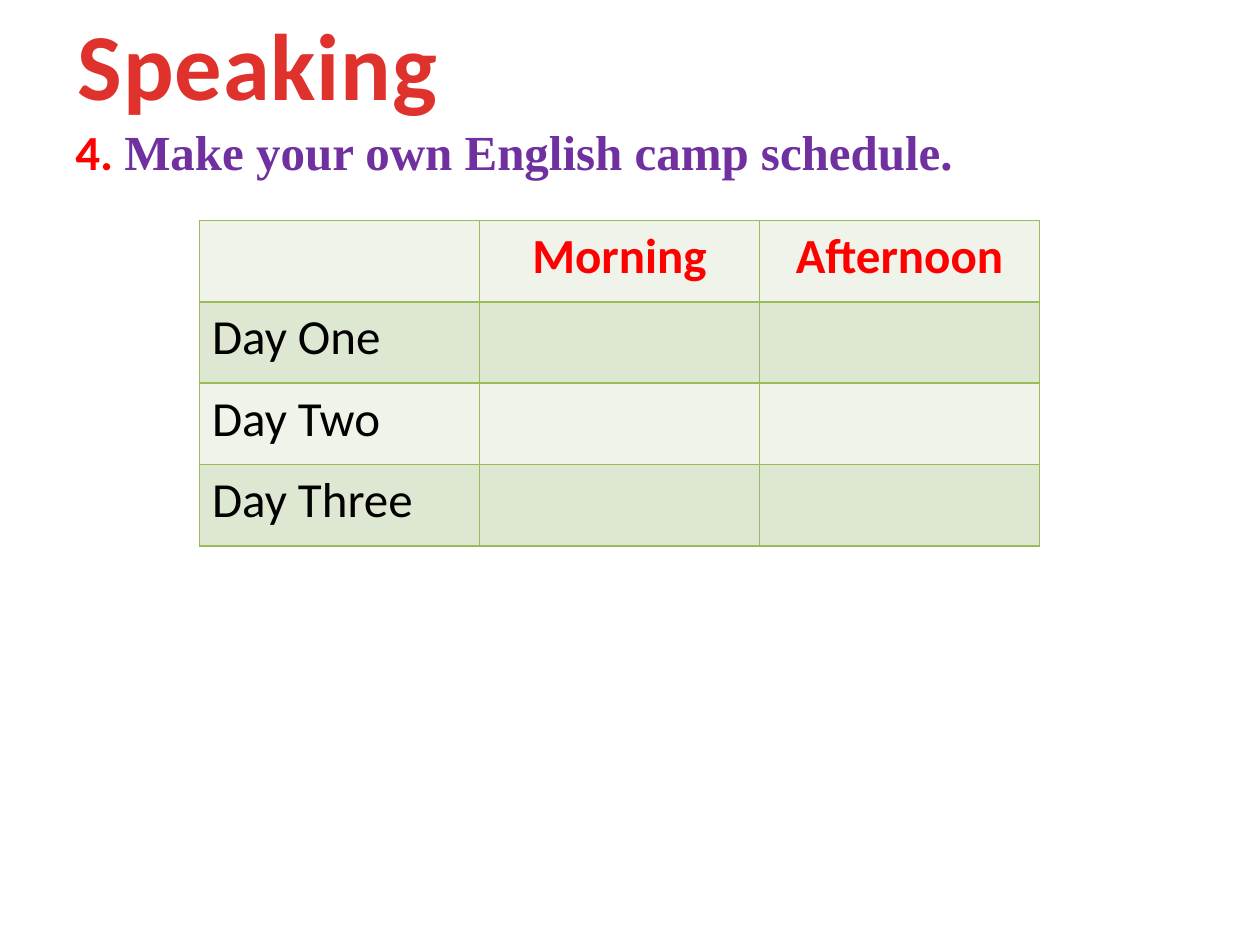
from dataclasses import dataclass

from lxml.etree import SubElement
from pptx import Presentation
from pptx.dml.color import RGBColor
from pptx.enum.text import MSO_ANCHOR, MSO_AUTO_SIZE, PP_ALIGN
from pptx.oxml.ns import qn
from pptx.util import Pt


@dataclass(frozen=True)
class Theme:
    heading_font: str = "Calibri"
    task_font: str = "Times New Roman"
    title_size: float = 54
    text_size: float = 28
    title: str = "E0322D"
    accent: str = "FF0000"
    task: str = "7030A0"
    text: str = "000000"
    border: str = "9BBB59"
    bands: tuple = ("EFF3EA", "DEE7D1")


class SlideBuilder:
    def __init__(self, slide, theme):
        self.slide = slide
        self.theme = theme

    def style(self, font, name, size, color, bold=True):
        font.name = name
        font.size = Pt(size)
        font.bold = bold
        font.color.rgb = RGBColor.from_string(color)

    def title(self, text, left, top, width, height):
        shape = self.slide.shapes.title
        shape.left, shape.top = Pt(left), Pt(top)
        shape.width, shape.height = Pt(width), Pt(height)
        frame = shape.text_frame
        frame.text = text
        frame.word_wrap = False
        frame.auto_size = MSO_AUTO_SIZE.SHAPE_TO_FIT_TEXT
        frame.vertical_anchor = MSO_ANCHOR.TOP
        paragraph = frame.paragraphs[0]
        paragraph.alignment = PP_ALIGN.CENTER
        self.style(paragraph.font, self.theme.heading_font,
                   self.theme.title_size, self.theme.title)
        # Letter spacing of half a point
        paragraph.runs[0].font._element.set("spc", "50")

    def task(self, number, text, left, top, width, height):
        theme = self.theme
        shape = self.slide.shapes.add_textbox(Pt(left), Pt(top), Pt(width), Pt(height))
        frame = shape.text_frame
        frame.word_wrap = True
        frame.auto_size = MSO_AUTO_SIZE.SHAPE_TO_FIT_TEXT
        paragraph = frame.paragraphs[0]
        for words, name, color in ((number + " ", theme.heading_font, theme.accent),
                                   (text, theme.task_font, theme.task)):
            run = paragraph.add_run()
            run.text = words
            self.style(run.font, name, theme.text_size, color)

    def table(self, rows, left, top, column_width, row_height):
        columns = len(rows[0])
        table = self.slide.shapes.add_table(
            len(rows), columns, Pt(left), Pt(top),
            Pt(column_width * columns), Pt(row_height * len(rows))).table
        for row_index, row in enumerate(rows):
            table.rows[row_index].height = Pt(row_height)
            for column_index, text in enumerate(row):
                self.cell(table.cell(row_index, column_index), text, row_index)

    def cell(self, cell, text, row_index):
        theme = self.theme
        is_header = row_index == 0
        # Borders come before the fill in the cell properties
        properties = cell._tc.get_or_add_tcPr()
        for side in ("a:lnL", "a:lnR", "a:lnT", "a:lnB"):
            line = SubElement(properties, qn(side), w=str(Pt(1)))
            fill = SubElement(line, qn("a:solidFill"))
            SubElement(fill, qn("a:srgbClr"), val=theme.border)
        cell.fill.solid()
        cell.fill.fore_color.rgb = RGBColor.from_string(theme.bands[row_index % 2])
        if text:
            cell.text = text
            paragraph = cell.text_frame.paragraphs[0]
            paragraph.alignment = PP_ALIGN.CENTER if is_header else PP_ALIGN.LEFT
            self.style(paragraph.font, theme.heading_font, theme.text_size,
                       theme.accent if is_header else theme.text, is_header)


def main():
    presentation = Presentation()
    presentation.slide_width, presentation.slide_height = Pt(720), Pt(540)
    title_only = presentation.slide_layouts[5]
    builder = SlideBuilder(presentation.slides.add_slide(title_only), Theme())

    # Heading and task
    builder.title("Speaking", 36, 0, 222.5, 72.7)
    builder.task("4.", "Make your own English camp schedule.", 36, 66, 624, 41)

    # Camp schedule
    days = ("Day One", "Day Two", "Day Three")
    schedule = [("", "Morning", "Afternoon")] + [(day, "", "") for day in days]
    builder.table(schedule, 114, 126, 160, 46.5)

    presentation.save("out.pptx")


if __name__ == "__main__":
    main()
